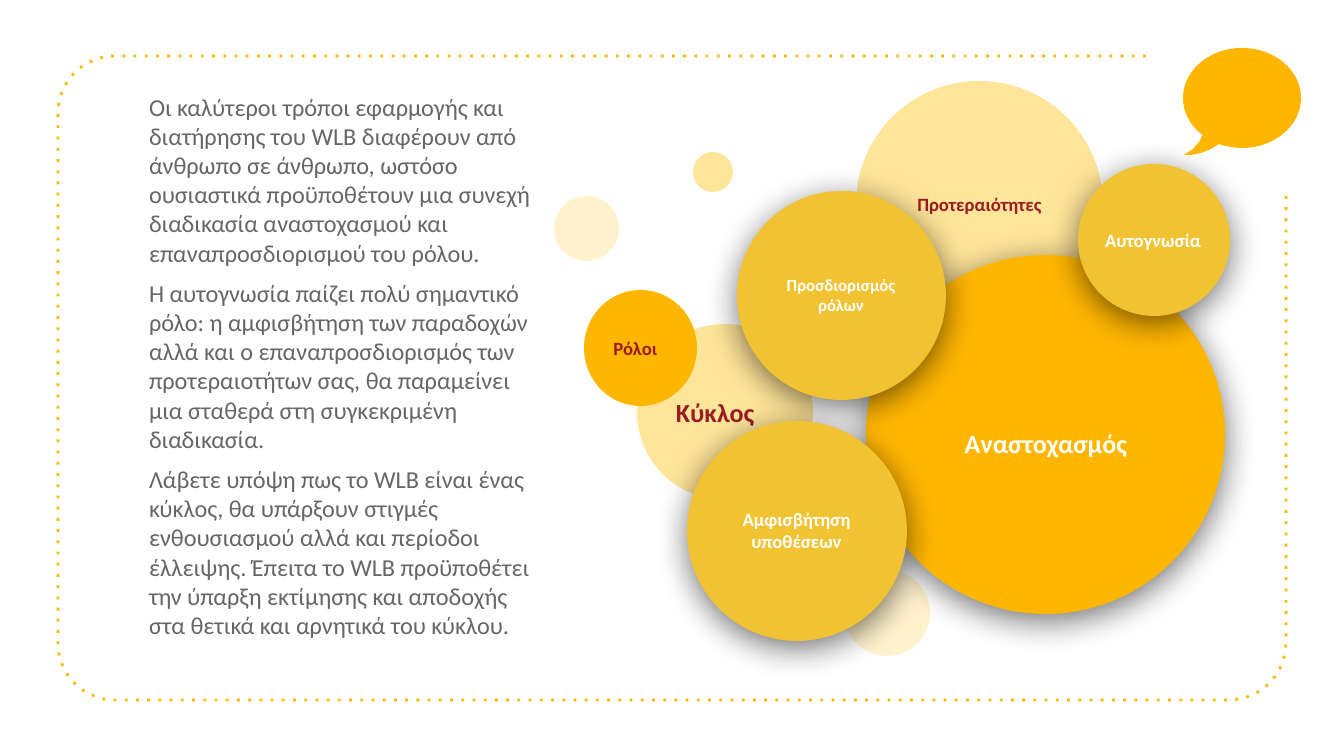
from dataclasses import dataclass
from math import cos, radians, sin

from lxml.etree import SubElement
from pptx import Presentation
from pptx.dml.color import RGBColor
from pptx.enum.shapes import MSO_SHAPE
from pptx.enum.text import MSO_ANCHOR, PP_ALIGN
from pptx.oxml.ns import qn
from pptx.util import Emu, Pt


@dataclass(frozen=True)
class Theme:
    font: str = "Calibri"
    amber: str = "FFB600"
    gold: str = "F1C232"
    sand: str = "FFE599"
    cream: str = "FFF2CC"
    red: str = "981C22"
    white: str = "FFFFFF"
    grey: str = "666666"
    large: int = 14
    body: int = 13
    small: int = 10
    tiny: int = 9


THEME = Theme()
EMU_PER_PX = 914400 / 134.4
SLIDE_SIZE = (1344, 756)
INSET = 13
LEFT, CENTER = PP_ALIGN.LEFT, PP_ALIGN.CENTER

# Content
BODY_BOX = (136, 79, 417, 609)
BODY = [
    "Οι καλύτεροι τρόποι εφαρμογής και διατήρησης του WLB διαφέρουν από άνθρωπο σε άνθρωπο, "
    "ωστόσο ουσιαστικά προϋποθέτουν μια συνεχή διαδικασία αναστοχασμού και "
    "επαναπροσδιορισμού του ρόλου.",
    "Η αυτογνωσία παίζει πολύ σημαντικό ρόλο: η αμφισβήτηση των παραδοχών αλλά και ο "
    "επαναπροσδιορισμός των προτεραιοτήτων σας, θα παραμείνει μια σταθερά στη συγκεκριμένη "
    "διαδικασία.",
    "Λάβετε υπόψη πως το WLB είναι ένας κύκλος, θα υπάρξουν στιγμές ενθουσιασμού αλλά και "
    "περίοδοι έλλειψης. Έπειτα το WLB προϋποθέτει την ύπαρξη εκτίμησης και αποδοχής στα "
    "θετικά και αρνητικά του κύκλου.",
]

# Flat circles, back to front: box, fill, label, size, alignment
FLAT_CIRCLES = [
    ((844, 570, 86, 86), THEME.cream, None, None, None),
    ((554, 196, 65, 65), THEME.cream, None, None, None),
    ((637, 324, 176, 176), THEME.sand, "Κύκλος", THEME.large, LEFT),
    ((856, 81, 247, 247), THEME.sand, "Προτεραιότητες", THEME.small, CENTER),
    ((584, 290, 113, 116), THEME.amber, "Ρόλοι", THEME.small, LEFT),
    ((693, 152, 40, 40), THEME.sand, None, None, None),
]

# Raised circles, back to front: box, fill, label box, label, size
RAISED_CIRCLES = [
    ((866, 255, 359, 359), THEME.amber, (909, 358, 274, 171), "Αναστοχασμός", THEME.large),
    ((737, 191, 209, 209), THEME.gold, (770, 226, 142, 138), "Προσδιορισμός ρόλων", THEME.tiny),
    ((687, 421, 220, 220), THEME.gold, (718, 461, 157, 138), "Αμφισβήτηση υποθέσεων", THEME.small),
    ((1078, 164, 152, 152), THEME.gold, (1087, 190, 132, 101), "Αυτογνωσία", THEME.small),
]

# Dotted frame and speech balloon
FRAME_LEFT, FRAME_TOP, FRAME_RIGHT, FRAME_BOTTOM = 58, 56, 1286, 700
FRAME_RADIUS = 57
FRAME_START = (1146, FRAME_TOP)
FRAME_END = (FRAME_RIGHT, 196)
BALLOON_CENTER, BALLOON_RADII = (1242, 98), (59, 50)
BALLOON_TAIL = [(1211, 149), (1201, 153), (1191, 155), (1184, 155), (1193, 149), (1199, 142)]


def px(length):
    return Emu(round(length * EMU_PER_PX))


def color(value):
    return RGBColor.from_string(value)


def arc(center, radii, start, end, steps):
    angles = [radians(start + (end - start) * i / steps) for i in range(steps + 1)]
    return [(center[0] + radii[0] * cos(a), center[1] + radii[1] * sin(a)) for a in angles]


def add_outline(page, points, close):
    start, *rest = [(px(x), px(y)) for x, y in points]
    builder = page.shapes.build_freeform(*start)
    builder.add_line_segments(rest, close=close)
    shape = builder.convert_to_shape()
    shape.shadow.inherit = False
    return shape


def add_circle(page, box, fill):
    circle = page.shapes.add_shape(MSO_SHAPE.OVAL, *map(px, box))
    circle.shadow.inherit = False
    circle.fill.solid()
    circle.fill.fore_color.rgb = color(fill)
    circle.line.fill.background()
    return circle


def add_shadow(shape):
    effects = shape._element.spPr.find(qn("a:effectLst"))
    shadow = SubElement(effects, qn("a:outerShdw"), blurRad=str(Pt(18)), dist=str(Pt(4)),
                        dir="5400000", algn="bl", rotWithShape="0")
    black = SubElement(shadow, qn("a:srgbClr"), val="000000")
    SubElement(black, qn("a:alpha"), val="55000")


def write(shape, texts, size, ink, align=LEFT, anchor=MSO_ANCHOR.MIDDLE, bold=True, before=0):
    frame = shape.text_frame
    frame.word_wrap = True
    frame.vertical_anchor = anchor
    frame.margin_left = frame.margin_right = px(INSET)
    frame.margin_top = frame.margin_bottom = px(INSET)
    for index, text in enumerate(texts):
        para = frame.add_paragraph() if index else frame.paragraphs[0]
        para.alignment = align
        para.space_before = Pt(before)
        span = para.add_run()
        span.text = text
        span.font.name = THEME.font
        span.font.size = Pt(size)
        span.font.bold = bold
        span.font.color.rgb = color(ink)


def add_frame(page):
    near_x, far_x = FRAME_LEFT + FRAME_RADIUS, FRAME_RIGHT - FRAME_RADIUS
    near_y, far_y = FRAME_TOP + FRAME_RADIUS, FRAME_BOTTOM - FRAME_RADIUS
    corners = [((near_x, near_y), 270), ((near_x, far_y), 180), ((far_x, far_y), 90)]
    points = [FRAME_START]
    for center, angle in corners:
        points += arc(center, (FRAME_RADIUS, FRAME_RADIUS), angle, angle - 90, 16)
    frame = add_outline(page, points + [FRAME_END], close=False)
    frame.fill.background()
    frame.line.color.rgb = color(THEME.amber)
    frame.line.width = Pt(1.5)
    SubElement(frame._element.spPr.find(qn("a:ln")), qn("a:prstDash"), val="dot")


def add_balloon(page):
    points = arc(BALLOON_CENTER, BALLOON_RADII, 132, 473, 80) + BALLOON_TAIL
    balloon = add_outline(page, points, close=True)
    balloon.fill.solid()
    balloon.fill.fore_color.rgb = color(THEME.amber)
    balloon.line.fill.background()


def main():
    deck = Presentation()
    deck.slide_width, deck.slide_height = map(px, SLIDE_SIZE)
    page = deck.slides.add_slide(deck.slide_layouts[6])

    add_frame(page)

    # Circles
    for box, fill, label, size, align in FLAT_CIRCLES:
        circle = add_circle(page, box, fill)
        if label:
            write(circle, [label], size, THEME.red, align)
    for box, fill, label_box, label, size in RAISED_CIRCLES:
        add_shadow(add_circle(page, box, fill))
        caption = page.shapes.add_textbox(*map(px, label_box))
        write(caption, [label], size, THEME.white, CENTER)

    add_balloon(page)

    # Body text
    body = page.shapes.add_textbox(*map(px, BODY_BOX))
    write(body, BODY, THEME.body, THEME.grey, anchor=MSO_ANCHOR.TOP, bold=False, before=6)

    deck.save("out.pptx")


if __name__ == "__main__":
    main()
